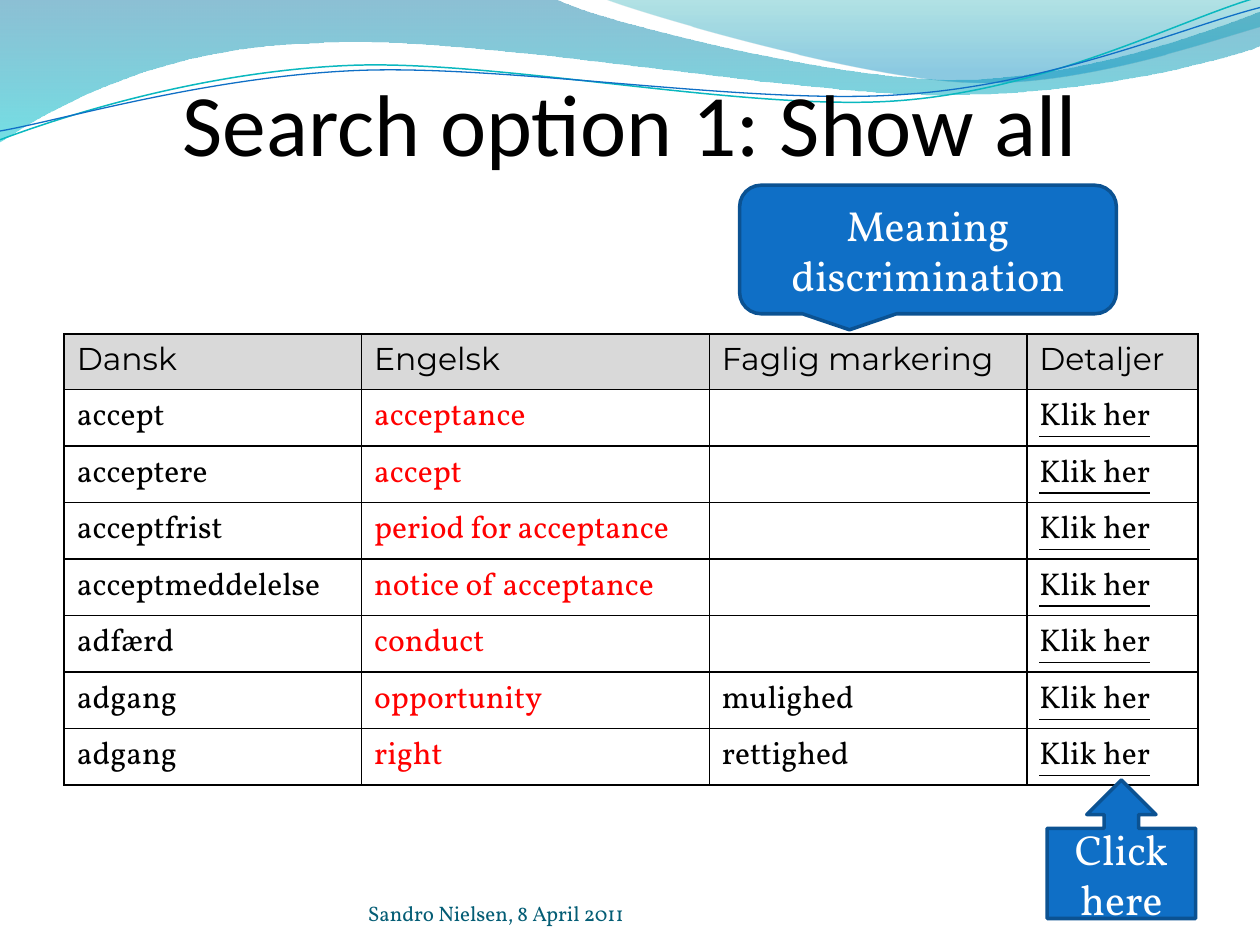
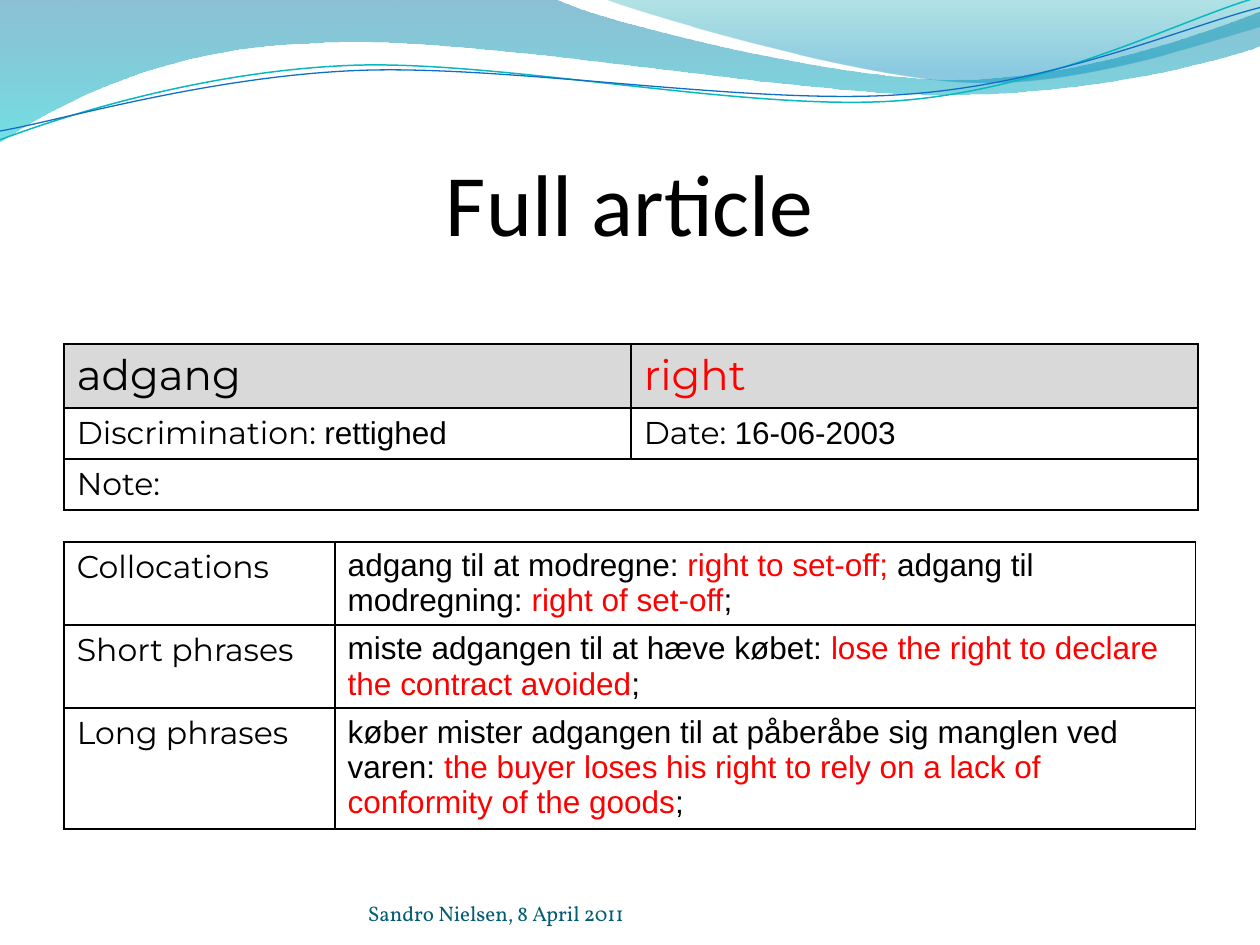
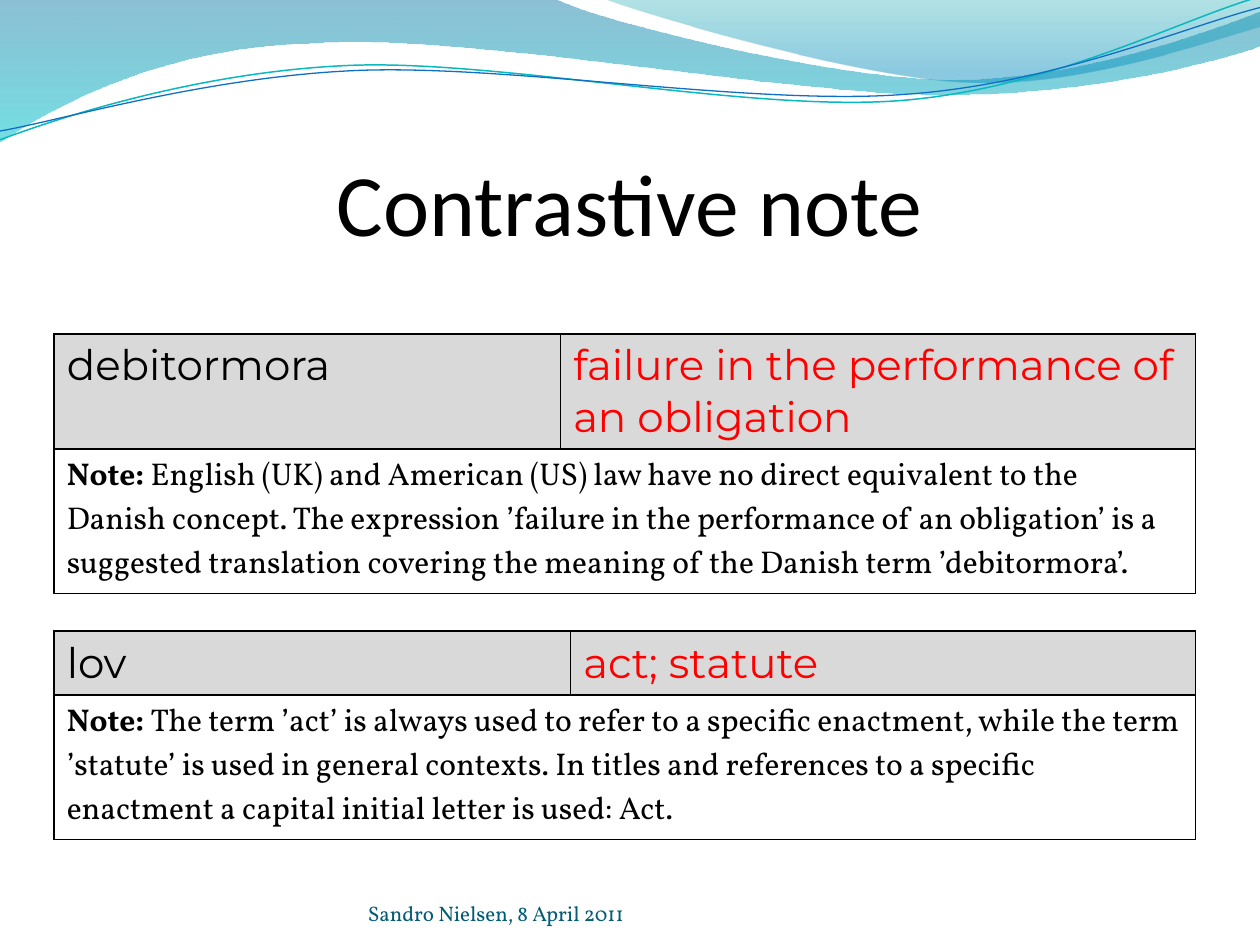
import pptx
import pptx.dml.color
import pptx.enum.shapes
import pptx.enum.text
import pptx.oxml
import pptx.oxml.ns
import pptx.util
from pptx.util import Inches

COLORS = {
    "ink": "000000", "english": "FF0000", "header": "D9D9D9", "white": "FFFFFF",
    "footer": "045D75", "callout": "0F6FC6", "callout_edge": "0B5292",
    "wave_line": "0AB8BF", "wave_blue": "0074A1", "wave_aqua": "00C6CF",
    "crest_teal": "00A1A9", "crest_blue": "008BBF",
}


def style(font, size, color="ink", **extra):
    return {"name": font, "size": pptx.util.Pt(size), "color": color, **extra}


STYLES = {
    "title": style("Calibri", 50),
    "footer": style("Vollkorn", 12, "footer"),
    "callout": style("Vollkorn", 24, "white"),
    "label": style("Montserrat", 18),
    "term": style("Montserrat", 24),
    "term_en": style("Montserrat", 24, "english"),
    "word": style("Vollkorn", 18),
    "word_en": style("Vollkorn", 18, "english"),
    "word_bold": style("Vollkorn", 18, bold=True),
    "link": style("Vollkorn", 18, underline=True),
    "phrase": style("Arial", 18),
    "phrase_en": style("Arial", 18, "english"),
}

# Each curve is a start point followed by Bezier segments (three points)
# or straight segments (one point).
BAND = [(0, 0), [(4.4, -0.01)],
        [(4.76, 0.17), (6.64, 0.63), (7.58, 0.63)],
        [(8.53, 0.63), (9.58, 0.26), (10, 0.09)], [(10.01, 0.36)],
        [(9.83, 0.44), (8.7, 0.76), (7.46, 0.75)],
        [(6.22, 0.75), (3.82, 0.28), (2.57, 0.34)],
        [(1.29, 0.36), (0.46, 0.83), (-0.01, 1.13)]]
CREST = [(4.79, -0.01),
         [(5.09, 0.11), (6.82, 0.62), (7.69, 0.65)],
         [(8.56, 0.69), (9.61, 0.32), (10, 0.21)], [(10, 0)]]
UPPER_LINE = [(0, 1.11),
              [(0.48, 0.93), (1.58, 0.57), (2.77, 0.52)],
              [(3.95, 0.47), (5.93, 0.89), (7.13, 0.8)],
              [(8.33, 0.71), (9.38, 0.15), (9.98, -0.02)]]
LOWER_LINE = [(0, 1.04),
              [(0.47, 0.96), (1.64, 0.61), (2.83, 0.56)],
              [(4.03, 0.51), (5.97, 0.84), (7.17, 0.75)],
              [(8.36, 0.67), (9.41, 0.21), (10, 0.06)]]


def rgb(color):
    return pptx.dml.color.RGBColor.from_string(COLORS[color])


def write(paragraph, runs):
    """Add (text, style name) runs to a paragraph."""
    for text, style_name in runs:
        run = paragraph.add_run()
        run.text = text
        for attribute, value in STYLES[style_name].items():
            if attribute == "color":
                run.font.color.rgb = rgb(value)
            else:
                setattr(run.font, attribute, value)


def set_frame(frame, anchor, margins=None):
    frame.word_wrap = True
    frame.auto_size = pptx.enum.text.MSO_AUTO_SIZE.NONE
    frame.vertical_anchor = anchor
    for side, margin in (margins or {}).items():
        setattr(frame, f"margin_{side}", Inches(margin))


def bend(shape, segments):
    """Turn each run of three straight steps of a freeform into one Bezier step."""
    steps = iter(list(shape.element.iter(pptx.oxml.ns.qn("a:lnTo"))))
    for segment in segments:
        first, *others = [next(steps) for _ in segment]
        if not others:
            continue
        bezier = first.makeelement(pptx.oxml.ns.qn("a:cubicBezTo"), {})
        first.addprevious(bezier)
        for step in (first, *others):
            bezier.append(step[0])
            step.getparent().remove(step)


def add_curve(slide, curve, close):
    start, *segments = curve
    builder = slide.shapes.build_freeform(*map(Inches, start), scale=1.0)
    points = [(Inches(x), Inches(y)) for segment in segments for x, y in segment]
    builder.add_line_segments(points, close=close)
    shape = builder.convert_to_shape()
    bend(shape, segments)
    shape.shadow.inherit = False
    return shape


def add_wave_fill(slide, curve, stops):
    """Fill a curve from top to bottom with (position, color, opacity %) stops."""
    wave = add_curve(slide, curve, True)
    wave.line.fill.background()
    wave.fill.gradient()
    wave.fill.gradient_angle = 270
    for stop, (position, color, _) in zip(wave.fill.gradient_stops, stops):
        stop.position = position
        stop.color.rgb = rgb(color)
    tints = wave.element.spPr.iter(pptx.oxml.ns.qn("a:srgbClr"))
    for tint, (_, _, opacity) in zip(list(tints), stops):
        alpha = tint.makeelement(pptx.oxml.ns.qn("a:alpha"), {"val": str(opacity * 1000)})
        tint.append(alpha)
    return wave


def add_wave_line(slide, curve, color, width):
    wave = add_curve(slide, curve, False)
    wave.fill.background()
    wave.line.color.rgb = rgb(color)
    wave.line.width = pptx.util.Pt(width)
    return wave


def move_waves_to_master(slide):
    """Draw the waves and put them behind everything on the slide master."""
    waves = [
        add_wave_fill(slide, BAND, [(0, "wave_blue", 45), (1, "wave_aqua", 55)]),
        add_wave_fill(slide, CREST, [(0, "crest_teal", 30), (0.8, "crest_blue", 45)]),
        add_wave_line(slide, UPPER_LINE, "wave_line", 0.85),
        add_wave_line(slide, LOWER_LINE, "callout", 0.75),
    ]
    master_tree = slide.slide_layout.slide_master.shapes.element
    for position, wave in enumerate(waves, start=2):
        master_tree.insert(position, wave.element)


def add_slide(deck, heading, top=0.77, height=1.25):
    slide = deck.slides.add_slide(deck.slide_layouts[5])
    title = slide.shapes.title
    title.left, title.top, title.width, title.height = map(Inches, (0.5, top, 9, height))
    bottom = pptx.enum.text.MSO_ANCHOR.BOTTOM
    set_frame(title.text_frame, bottom, {"left": 0, "top": 0.05, "right": 0, "bottom": 0})
    title.text_frame.paragraphs[0].alignment = pptx.enum.text.PP_ALIGN.CENTER
    write(title.text_frame.paragraphs[0], [(heading, "title")])
    return slide


def add_footer(slide):
    footer = slide.shapes.add_textbox(*map(Inches, (2.92, 6.95, 3.67, 0.4))).text_frame
    set_frame(footer, pptx.enum.text.MSO_ANCHOR.BOTTOM,
              dict.fromkeys(("left", "top", "right", "bottom"), 0))
    write(footer.paragraphs[0], [("Sandro Nielsen, 8 April 2011", "footer")])


def add_borders(cell):
    properties = cell._tc.get_or_add_tcPr()
    for edge in ("lnL", "lnR", "lnT", "lnB"):
        properties.append(pptx.oxml.parse_xml(
            f'<a:{edge} {pptx.oxml.ns.nsdecls("a")} w="12700"><a:solidFill>'
            f'<a:srgbClr val="{COLORS["ink"]}"/></a:solidFill></a:{edge}>'))


def add_grid(slide, left, top, widths, heights, rows, header=True, body_fill=None):
    """Add a table; each cell is a list of runs, None joins the cell to its left."""
    table = slide.shapes.add_table(
        len(rows), len(widths), Inches(left), Inches(top),
        Inches(sum(widths)), Inches(sum(heights))).table
    table.first_row = table.horz_banding = False
    for column, width in zip(table.columns, widths):
        column.width = Inches(width)
    for row, height in zip(table.rows, heights):
        row.height = Inches(height)
    for r, row in enumerate(rows):
        for c, runs in enumerate(row):
            cell = table.cell(r, c)
            add_borders(cell)
            fill = "header" if header and r == 0 else body_fill
            if fill:
                cell.fill.solid()
                cell.fill.fore_color.rgb = rgb(fill)
            else:
                cell.fill.background()
            if runs is None:
                table.cell(r, c - 1).merge(cell)
            else:
                write(cell.text_frame.paragraphs[0], runs)


def add_callout(slide, kind, box, text):
    callout = slide.shapes.add_shape(kind, *map(Inches, box))
    callout.shadow.inherit = False
    callout.fill.solid()
    callout.fill.fore_color.rgb = rgb("callout")
    callout.line.color.rgb = rgb("callout_edge")
    callout.line.width = pptx.util.Pt(2)
    set_frame(callout.text_frame, pptx.enum.text.MSO_ANCHOR.MIDDLE)
    callout.text_frame.paragraphs[0].alignment = pptx.enum.text.PP_ALIGN.CENTER
    write(callout.text_frame.paragraphs[0], [(text, "callout")])


def add_show_all(deck):
    slide = add_slide(deck, "Search option 1: Show all", 0.36, 1.02)
    move_waves_to_master(slide)
    entries = [
        ("accept", "acceptance", ""),
        ("acceptere", "accept", ""),
        ("acceptfrist", "period for acceptance", ""),
        ("acceptmeddelelse", "notice of acceptance", ""),
        ("adfærd", "conduct", ""),
        ("adgang", "opportunity", "mulighed"),
        ("adgang", "right", "rettighed"),
    ]
    rows = [[[(label, "label")] for label in
             ("Dansk", "Engelsk", "Faglig markering", "Detaljer")]]
    for danish, english, marking in entries:
        rows.append([[(danish, "word")], [(english, "word_en")],
                     [(marking, "word")] if marking else [], [("Klik her", "link")]])
    add_grid(slide, 0.51, 2.65, [2.36, 2.76, 2.52, 1.36], [0.44] * len(rows), rows)
    add_footer(slide)

    kinds = pptx.enum.shapes.MSO_SHAPE
    add_callout(slide, kinds.ROUNDED_RECTANGULAR_CALLOUT, (5.87, 1.47, 2.99, 1.02),
                "Meaning discrimination")
    add_callout(slide, kinds.UP_ARROW_CALLOUT, (8.31, 6.19, 1.18, 1.1), "Click here")


def add_full_article(deck):
    slide = add_slide(deck, "Full article")
    article = [
        [[("adgang", "term")], [("right", "term_en")]],
        [[("Discrimination: ", "label"), ("rettighed", "phrase")],
         [("Date: ", "label"), ("16-06-2003", "phrase")]],
        [[("Note:", "label")], None],
    ]
    add_grid(slide, 0.51, 2.73, [4.5, 4.5], [0.4] * 3, article, body_fill="white")
    add_footer(slide)
    usage = [
        [[("Collocations", "label")],
         [("adgang til at modregne: ", "phrase"), ("right to set-off; ", "phrase_en"),
          ("adgang til modregning: ", "phrase"), ("right of set-off", "phrase_en"),
          (";", "phrase")]],
        [[("Short phrases", "label")],
         [("miste adgangen til at hæve købet: ", "phrase"),
          ("lose the right to declare the contract avoided", "phrase_en"),
          (";", "phrase")]],
        [[("Long phrases", "label")],
         [("køber mister adgangen til at påberåbe sig manglen ved varen: ", "phrase"),
          ("the buyer loses his right to rely on a lack of conformity of the goods",
           "phrase_en"), (";", "phrase")]],
    ]
    add_grid(slide, 0.51, 4.3, [2.15, 6.83], [0.66, 0.66, 0.96], usage, header=False)


def add_note(slide, top, widths, heights, danish, english, note):
    rows = [[[(danish, "term")], [(english, "term_en")]],
            [[("Note: ", "word_bold"), (note, "word")], None]]
    add_grid(slide, 0.43, top, widths, heights, rows)


def add_contrastive_note(deck):
    slide = add_slide(deck, "Contrastive note")
    add_footer(slide)
    add_note(slide, 2.65, [4.02, 5.04], [0.63, 0.63],
             "debitormora", "failure in the performance of an obligation",
             "English (UK) and American (US) law have no direct equivalent to the Danish "
             "concept. The expression ’failure in the performance of an obligation’ is a "
             "suggested translation covering the meaning of the Danish term ’debitormora’.")
    add_note(slide, 5.01, [4.1, 4.96], [0.48, 1.01], "lov", "act; statute",
             "The term ’act’ is always used to refer to a specific enactment, while the "
             "term ’statute’ is used in general contexts. In titles and references to a "
             "specific enactment a capital initial letter is used: Act.")


def main():
    deck = pptx.Presentation()
    deck.slide_width, deck.slide_height = Inches(10), Inches(7.5)
    add_show_all(deck)
    add_full_article(deck)
    add_contrastive_note(deck)
    deck.save("out.pptx")


if __name__ == "__main__":
    main()
